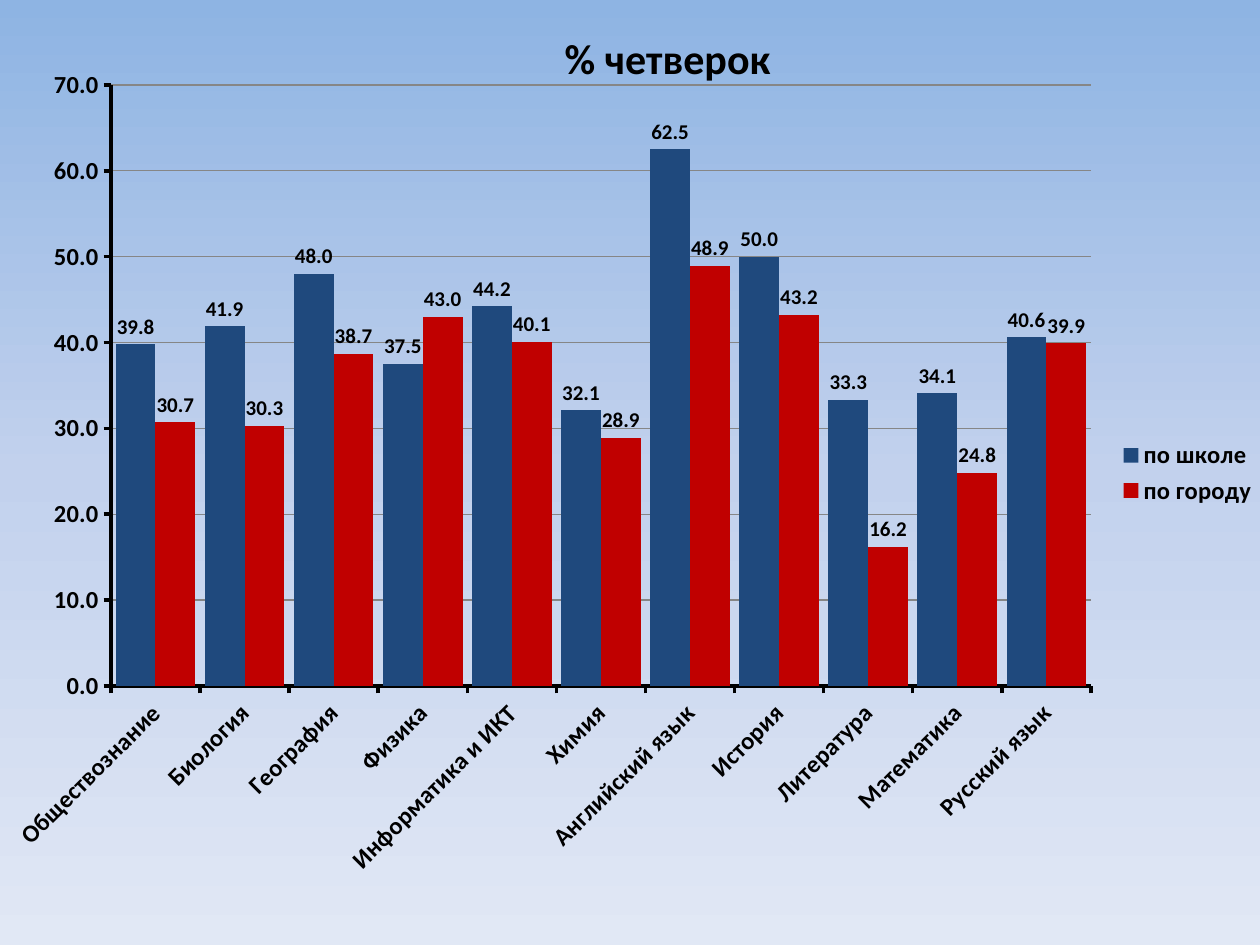
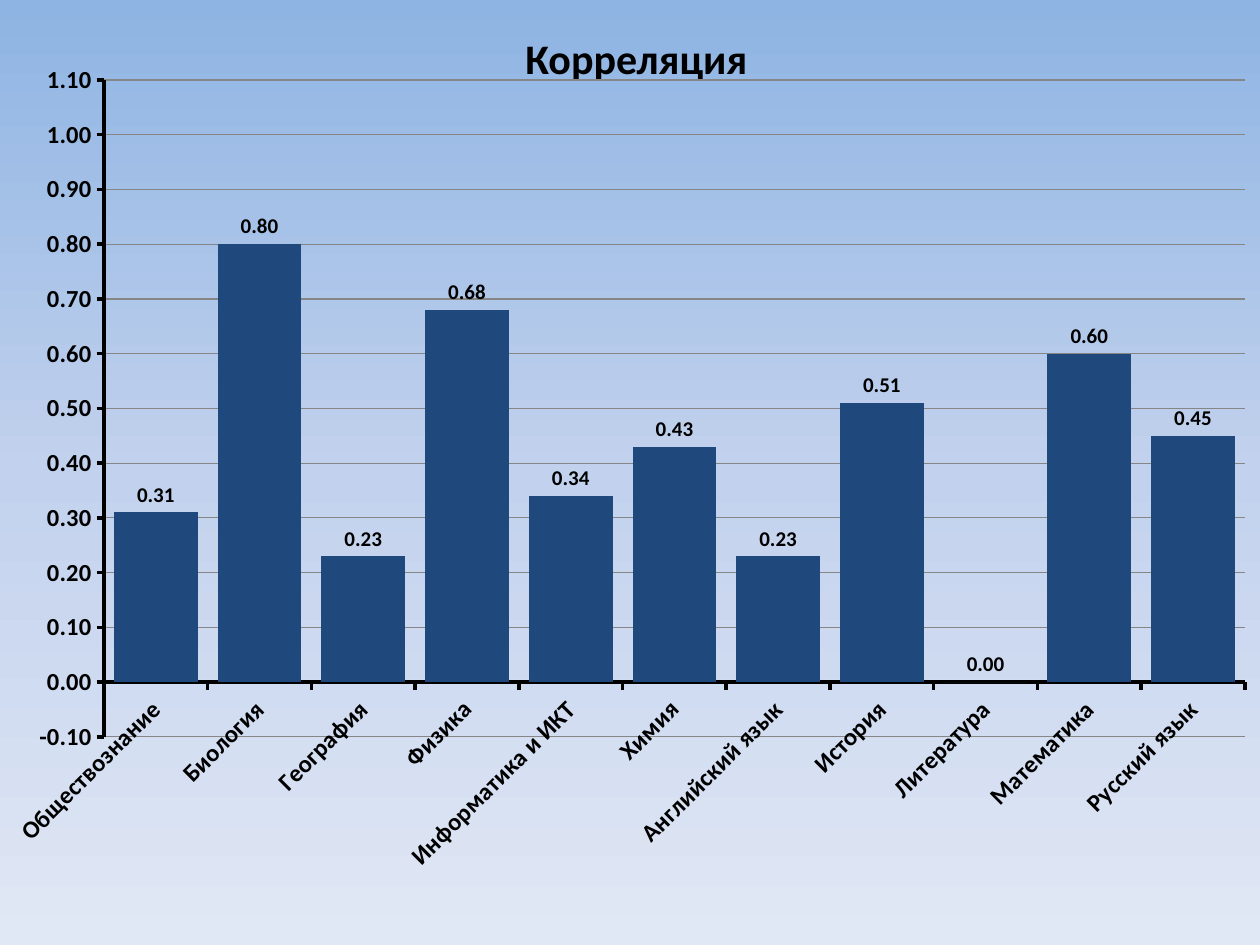
from copy import deepcopy

from lxml import etree
from pptx import Presentation
from pptx import util as u
from pptx.chart.data import CategoryChartData
from pptx.dml.color import RGBColor
from pptx.enum import chart as ch
from pptx.enum import text
from pptx.oxml.ns import qn

PX = 914400 / 126
SLIDE_W, SLIDE_H = 1260, 945
FONT = "Calibri"
BLACK, NAVY, RED, GREY = "000000", "1F497D", "C00000", "868686"
BACKGROUND = [(0, "8EB4E3"), (0.5, "C2D1ED"), (1, "E1E8F5")]
CHART_BOX = (-11, 54, 1281, 838)
SUBJECTS = ["Обществознание", "Биология", "География", "Физика",
            "Информатика и ИКТ", "Химия", "Английский язык", "История",
            "Литература", "Математика", "Русский язык"]
SCHOOL = [39.8, 41.9, 48, 37.5, 44.2, 32.1, 62.5, 50, 33.3, 34.1, 40.6]
CITY = [30.7, 30.3, 38.7, 43, 40.1, 28.9, 48.9, 43.2, 16.2, 24.8, 39.9]
CORRELATION = [0.31, 0.8, 0.23, 0.68, 0.34, 0.43, 0.23, 0.51, 0, 0.6, 0.45]


def px(n):
    return u.Emu(round(n * PX))


def rgb(colour):
    return RGBColor.from_string(colour)


def set_font(font, size, bold=True):
    font.name, font.size, font.bold = FONT, u.Pt(size), bold
    font.color.rgb = rgb(BLACK)


def set_line(line, colour, width):
    line.color.rgb = rgb(colour)
    line.width = u.Pt(width)


def set_background(master):
    fill = master.background.fill
    fill.gradient()
    fill.gradient_angle = 270
    stops = master.element.find(".//" + qn("a:gsLst"))
    stops.append(deepcopy(stops[-1]))
    for stop, (position, colour) in zip(fill.gradient_stops, BACKGROUND):
        stop.position = position
        stop.color.rgb = rgb(colour)


def add_slide(prs, title, left, width):
    s = prs.slides.add_slide(prs.slide_layouts[5])
    sp = s.shapes.title
    sp.left, sp.top, sp.width, sp.height = map(px, (left, 26, width, 63))
    tf = sp.text_frame
    tf.word_wrap = False
    tf.auto_size = text.MSO_AUTO_SIZE.SHAPE_TO_FIT_TEXT
    tf.vertical_anchor = text.MSO_ANCHOR.TOP
    p = tf.paragraphs[0]
    p.alignment = text.PP_ALIGN.CENTER
    r = p.add_run()
    r.text = title
    set_font(r.font, 24)
    return s


def style_axis(axis):
    axis.major_tick_mark = ch.XL_TICK_MARK.OUTSIDE
    axis.minor_tick_mark = ch.XL_TICK_MARK.NONE
    set_line(axis.format.line, BLACK, 2)
    set_font(axis.tick_labels.font, 14)


def clear_background(chart):
    """Make the chart area transparent and borderless."""
    sp_pr = etree.Element(qn("c:spPr"))
    etree.SubElement(sp_pr, qn("a:noFill"))
    line = etree.SubElement(sp_pr, qn("a:ln"))
    etree.SubElement(line, qn("a:noFill"))
    chart._chartSpace.find(qn("c:txPr")).addprevious(sp_pr)


def place_plot(chart, left, top, right, bottom):
    """Fix the inner plot area, given in slide px."""
    x, y, w, h = CHART_BOX
    area = chart._chartSpace.find(".//" + qn("c:plotArea"))
    for layout in area.findall(qn("c:layout")):
        area.remove(layout)
    layout = etree.Element(qn("c:layout"))
    area.insert(0, layout)
    manual = etree.SubElement(layout, qn("c:manualLayout"))
    settings = [("layoutTarget", "inner"), ("xMode", "edge"), ("yMode", "edge"),
                ("x", (left - x) / w), ("y", (top - y) / h),
                ("w", (right - left) / w), ("h", (bottom - top) / h)]
    for name, value in settings:
        etree.SubElement(manual, qn("c:" + name)).set("val", str(value))


def add_columns(s, series, number_format, plot_box, low, high, step):
    """Add a column chart; series holds (name, values, colour)."""
    data = CategoryChartData(number_format=number_format)
    data.categories = SUBJECTS
    for name, values, _ in series:
        data.add_series(name, values)
    chart = s.shapes.add_chart(ch.XL_CHART_TYPE.COLUMN_CLUSTERED,
                               *map(px, CHART_BOX), data).chart
    chart.has_title = False
    set_font(chart.font, 10, False)
    clear_background(chart)
    place_plot(chart, *plot_box)

    chart.has_legend = len(series) > 1
    if chart.has_legend:
        chart.legend.position = ch.XL_LEGEND_POSITION.RIGHT
        chart.legend.include_in_layout = False
        set_font(chart.legend.font, 14)

    category_axis, value_axis = chart.category_axis, chart.value_axis
    style_axis(category_axis)
    category_axis._element.find(qn("c:txPr")).find(qn("a:bodyPr")).set("rot", "-2700000")
    style_axis(value_axis)
    value_axis.minimum_scale, value_axis.maximum_scale = low, high
    value_axis.major_unit = step
    value_axis.tick_labels.number_format = number_format
    value_axis.tick_labels.number_format_is_linked = False
    set_line(value_axis.major_gridlines.format.line, GREY, 0.75)

    plot = chart.plots[0]
    plot.gap_width, plot.overlap = 24, 0
    plot.vary_by_categories = False
    for columns, (_, _, colour) in zip(plot.series, series):
        columns.format.fill.solid()
        columns.format.fill.fore_color.rgb = rgb(colour)
        columns.invert_if_negative = False
        labels = columns.data_labels
        labels.show_value = True
        labels.position = ch.XL_LABEL_POSITION.OUTSIDE_END
        labels.number_format = number_format
        labels.number_format_is_linked = False
        set_font(labels.font, 12)


def main():
    prs = Presentation()
    prs.slide_width, prs.slide_height = px(SLIDE_W), px(SLIDE_H)
    set_background(prs.slide_master)

    s = add_slide(prs, "% четверок", 551, 233)
    add_columns(s, [("по школе", SCHOOL, NAVY), ("по городу", CITY, RED)],
                "0.0", (111, 85, 1091, 686), 0, 70, 10)

    s = add_slide(prs, "Корреляция", 512, 249)
    add_columns(s, [("Series 1", CORRELATION, NAVY)],
                "0.00", (104, 80, 1245, 737), -0.1, 1.1, 0.1)

    prs.save("out.pptx")


if __name__ == "__main__":
    main()
